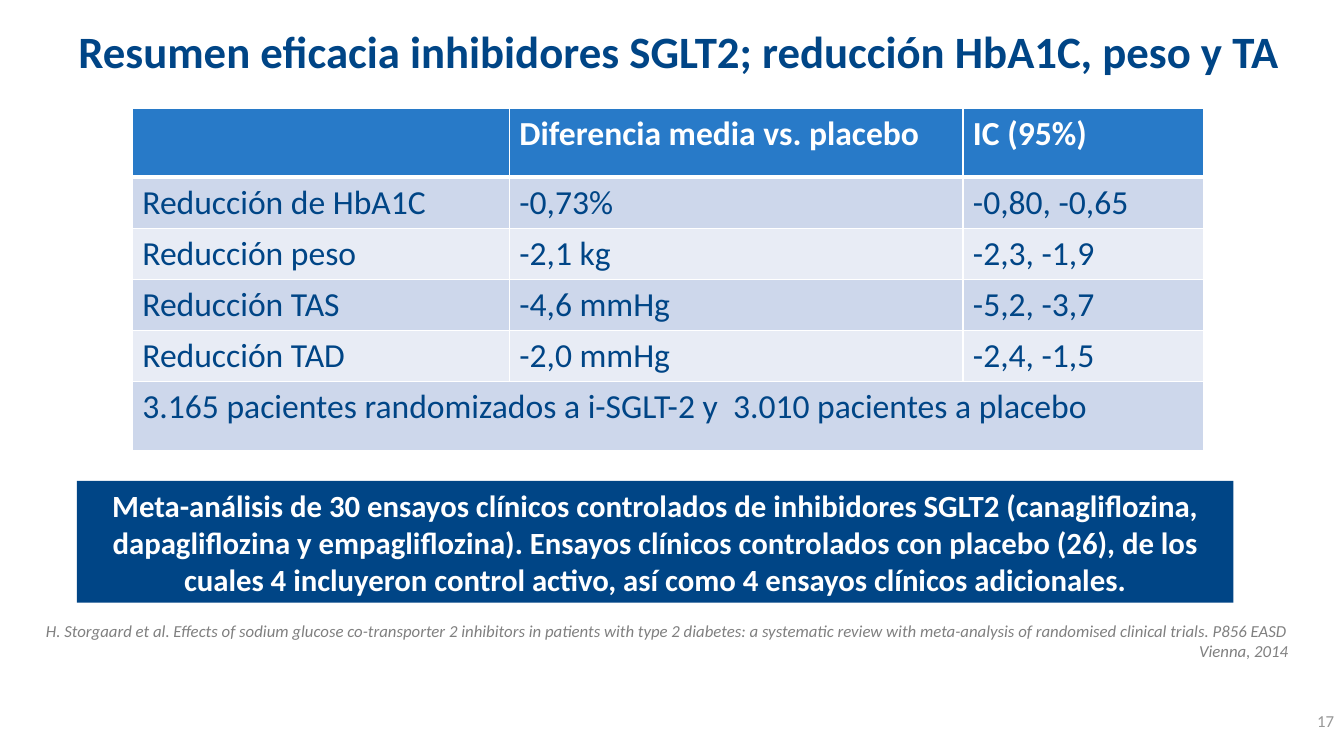
"""Builds a slide summarising the efficacy of SGLT2 inhibitors."""
from pptx import Presentation, oxml
from pptx.dml.color import RGBColor
from pptx.enum import shapes, text
from pptx.util import Pt

NAVY = RGBColor(0x00, 0x45, 0x86)
BLUE = RGBColor(0x28, 0x7A, 0xC8)
BAND_DARK = RGBColor(0xCD, 0xD7, 0xEB)
BAND_LIGHT = RGBColor(0xE8, 0xEC, 0xF5)
WHITE = RGBColor(0xFF, 0xFF, 0xFF)
GREY = RGBColor(0x80, 0x80, 0x80)
NUMBER_GREY = RGBColor(0x97, 0x97, 0x97)

TITLE = "Resumen eficacia inhibidores SGLT2; reducción HbA1C, peso y TA"
ROWS = [
    ("", "Diferencia media vs. placebo", "IC (95%)"),
    ("Reducción de HbA1C", "-0,73%", "-0,80, -0,65"),
    ("Reducción peso", "-2,1 kg", "-2,3, -1,9"),
    ("Reducción TAS", "-4,6 mmHg", "-5,2, -3,7"),
    ("Reducción TAD", "-2,0 mmHg", "-2,4, -1,5"),
    ("3.165 pacientes randomizados a i-SGLT-2 y  3.010 pacientes a placebo", "", ""),
]
COLUMN_WIDTHS = (269.3, 324, 172)
ROW_HEIGHTS = (49, 36.5, 36.5, 36.5, 36.5, 49)
SUMMARY = (
    "Meta-análisis de 30 ensayos clínicos controlados de inhibidores SGLT2 "
    "(canagliflozina, dapagliflozina y empagliflozina). Ensayos clínicos "
    "controlados con placebo (26), de los cuales 4 incluyeron control activo, "
    "así como 4 ensayos clínicos adicionales."
)
CITATION = (
    "H. Storgaard et al. Effects of sodium glucose co-transporter 2 inhibitors "
    "in patients with type 2 diabetes: a systematic review with meta-analysis of "
    "randomised clinical trials. P856 EASD Vienna, 2014"
)
PAGE_NUMBER = "17"


def place(box, left, top, width, height):
    """Moves and sizes a shape, in points."""
    bounds = {"left": left, "top": top, "width": width, "height": height}
    for name, value in bounds.items():
        setattr(box, name, Pt(value))


def write(frame, words, align, size, color, **styles):
    """Fills a text frame with one formatted paragraph."""
    para = frame.paragraphs[0]
    para.alignment = align
    para.space_before = Pt(0)
    span = para.add_run()
    span.text = words
    span.font.color.rgb = color
    for name, value in {"name": "Calibri", "size": Pt(size), **styles}.items():
        setattr(span.font, name, value)


def add_borders(cell, bottom):
    """Draws white lines around a cell, the lower one of the given width."""
    for side, width in {"L": 1, "R": 1, "T": 1, "B": bottom}.items():
        cell._tc.get_or_add_tcPr().append(oxml.parse_xml(
            '<a:ln%s xmlns:a="http://schemas.openxmlformats.org/drawingml/2006/main" w="%d">'
            '<a:solidFill><a:srgbClr val="%s"/></a:solidFill></a:ln%s>'
            % (side, Pt(width), WHITE, side)))


def add_results(page):
    """Adds the table of mean differences."""
    holder = page.shapes.add_table(
        len(ROWS), len(COLUMN_WIDTHS), Pt(94.5), Pt(77.5),
        Pt(sum(COLUMN_WIDTHS)), Pt(sum(ROW_HEIGHTS)))
    table = holder.table
    for column, width in zip(table.columns, COLUMN_WIDTHS):
        column.width = Pt(width)
    table.cell(len(ROWS) - 1, 0).merge(table.cell(len(ROWS) - 1, len(COLUMN_WIDTHS) - 1))
    for index, words in enumerate(ROWS):
        table.rows[index].height = Pt(ROW_HEIGHTS[index])
        header = index == 0
        fill = BLUE if header else BAND_DARK if index % 2 else BAND_LIGHT
        for cell, label in zip(table.rows[index].cells, words):
            add_borders(cell, 3 if header else 1)
            cell.fill.solid()
            cell.fill.fore_color.rgb = fill
            if label:
                write(cell.text_frame, label, text.PP_ALIGN.LEFT, 24,
                      WHITE if header else NAVY, bold=header)


def main():
    """Puts the slide together and saves it."""
    deck = Presentation()
    deck.slide_width, deck.slide_height = Pt(960), Pt(540)
    page = deck.slides.add_slide(deck.slide_layouts[1])
    middle, right = text.PP_ALIGN.CENTER, text.PP_ALIGN.RIGHT

    title = page.shapes.title
    place(title, 48, 12.5, 874, 47.5)
    frame_format = {"auto_size": text.MSO_AUTO_SIZE.NONE, "margin_left": 0,
                    "margin_right": 0, "vertical_anchor": text.MSO_ANCHOR.MIDDLE}
    for name, value in frame_format.items():
        setattr(title.text_frame, name, value)
    write(title.text_frame, TITLE, middle, 32, NAVY, bold=True)

    citation = page.placeholders[1]
    place(citation, 15, 440, 912.5, 23)
    citation.text_frame.auto_size = text.MSO_AUTO_SIZE.NONE
    properties = citation.text_frame.paragraphs[0]._p.get_or_add_pPr()
    for name in ("marL", "indent"):
        properties.set(name, "0")
    properties.append(oxml.parse_xml(
        '<a:buNone xmlns:a="http://schemas.openxmlformats.org/drawingml/2006/main"/>'))
    write(citation.text_frame, CITATION, right, 12, GREY, italic=True)

    add_results(page)

    summary = page.shapes.add_shape(
        shapes.MSO_SHAPE.RECTANGLE, Pt(55), Pt(343.5), Pt(826), Pt(87))
    summary.shadow.inherit = False
    summary.fill.solid()
    summary.fill.fore_color.rgb = NAVY
    summary.line.fill.background()
    summary.text_frame.word_wrap = True
    write(summary.text_frame, SUMMARY, middle, 22, WHITE, bold=True)

    number = page.shapes.add_textbox(Pt(736), Pt(500.5), Pt(224), Pt(29))
    number.text_frame.word_wrap = True
    number.text_frame.vertical_anchor = text.MSO_ANCHOR.MIDDLE
    write(number.text_frame, PAGE_NUMBER, right, 12, NUMBER_GREY)

    deck.save("out.pptx")


if __name__ == "__main__":
    main()
